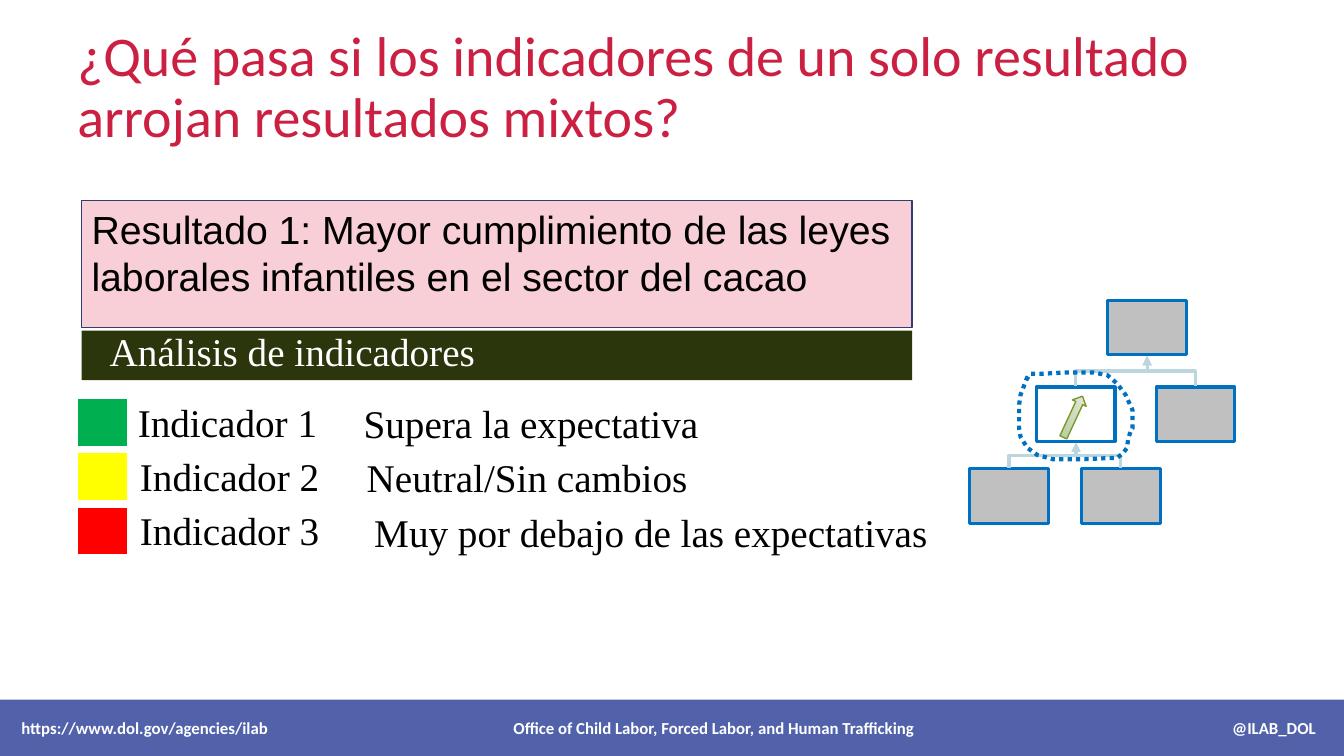
from pptx import Presentation
from pptx.dml.color import RGBColor
from pptx.enum.dml import MSO_LINE
from pptx.enum.shapes import MSO_CONNECTOR, MSO_SHAPE
from pptx.enum.text import MSO_ANCHOR, PP_ALIGN
from pptx.oxml.ns import qn
from pptx.util import Pt
from lxml import etree

RECT, ARROW = MSO_SHAPE.RECTANGLE, MSO_SHAPE.RIGHT_ARROW
ELBOW, DOTS = MSO_CONNECTOR.ELBOW, MSO_LINE.ROUND_DOT
TOP, MID = MSO_ANCHOR.TOP, MSO_ANCHOR.MIDDLE
LEFT, CENTER, RIGHT = PP_ALIGN.LEFT, PP_ALIGN.CENTER, PP_ALIGN.RIGHT
SERIF = "Times New Roman"

HEX = {
    "title": "CB2042", "pink": "F8CFD7", "navy": "2F3C78", "olive": "2B360D",
    "green": "00B050", "yellow": "FFFF00", "red": "FF0000", "gray": "C0C0C0",
    "blue": "0070C0", "pale": "BCD6E0", "leaf": "7C992E", "dark": "B4C998",
    "light": "E8EDE1", "footer": "3F51A2", "black": "000000", "white": "FFFFFF",
}
COLOR = {name: RGBColor.from_string(code) for name, code in HEX.items()}

prs = Presentation()
prs.slide_width, prs.slide_height = Pt(960), Pt(540)
shapes = prs.slides.add_slide(prs.slide_layouts[6]).shapes


def add_box(kind, x, y, w, h, fill=None, line=None, width=1):
    """Add a preset shape; without a fill or line name that part is clear."""
    box = shapes.add_shape(kind, Pt(x), Pt(y), Pt(w), Pt(h))
    box.shadow.inherit = False
    if fill:
        box.fill.solid()
        box.fill.fore_color.rgb = COLOR[fill]
    else:
        box.fill.background()
    if line:
        box.line.color.rgb = COLOR[line]
        box.line.width = Pt(width)
    else:
        box.line.fill.background()
    return box


def add_text(text, x, y, w, h, size=28, font=SERIF, color="black",
             align=LEFT, anchor=TOP, bold=False):
    box = shapes.add_textbox(Pt(x), Pt(y), Pt(w), Pt(h))
    frame = box.text_frame
    frame.text = text
    frame.word_wrap = True
    frame.vertical_anchor = anchor
    para = frame.paragraphs[0]
    para.alignment = align
    face = para.runs[0].font
    face.size, face.name, face.bold = Pt(size), font, bold
    face.color.rgb = COLOR[color]
    return para


# Title and result
title = add_text("¿Qué pasa si los indicadores de un solo resultado arrojan resultados mixtos?",
                 48.2, 27.4, 851.8, 72, 40, "Calibri", "title", anchor=MID)
title.line_spacing = 0.9

add_box(RECT, 58.3, 143.3, 593.3, 90.7, "pink", "navy")
add_text("Resultado 1: Mayor cumplimiento de las leyes laborales infantiles en el sector del cacao",
         58.3, 143.3, 593.3, 90.7, font="Arial")
add_box(RECT, 58.3, 236.2, 593.3, 35.3, "olive")
add_text("Análisis de indicadores", 71.3, 230.4, 580.3, 42.5, color="white")

# Indicator rows
rows = [
    ("green", 91.4, "Supera la expectativa", 252.7, LEFT),
    ("yellow", 92.9, "Neutral/Sin cambios", 254.9, LEFT),
    ("red", 92.9, "Muy por debajo de las expectativas", 247.7, RIGHT),
]
for i, (color, left, finding, x, align) in enumerate(rows):
    add_box(RECT, 55.4, 284.4 + 38.9 * i, 35.6, 34.4, color, "white")
    add_text(f"Indicador {i + 1}", left, 281.2 + 38.5 * i, 144, 41)
    add_text(finding, x, 281.5 + 38.9 * i, 421.9, 41, align=align)

# Results tree
nodes = [(791.3, 214.6, "gray"), (772.6, 334.8, "gray"), (692.6, 334.8, "gray"),
         (825.8, 276.5, "gray"), (740.2, 276.5, None)]
for x, y, fill in nodes:
    add_box(RECT, x, y, 56.2, 38.9, fill, "blue", 2.25)

links = [(720.7, 334.1, 768.6, 316.1), (800.6, 334.1, 768.6, 316.1),
         (768.2, 275.8, 819.4, 254.2), (853.9, 275.8, 819.4, 254.2)]
for x1, y1, x2, y2 in links:
    # An upright elbow is a level one turned a quarter about its centre
    mid_x, mid_y = (x1 + x2) / 2, (y1 + y2) / 2
    high, wide = y1 - y2, abs(x2 - x1)
    side = 1 if x2 > x1 else -1
    link = shapes.add_connector(
        ELBOW, Pt(mid_x - side * high / 2), Pt(mid_y - wide / 2),
        Pt(mid_x + side * high / 2), Pt(mid_y + wide / 2))
    link.line.color.rgb = COLOR["pale"]
    link.line.width = Pt(2.25)
    props = link._element.spPr
    props.find(qn("a:xfrm")).set("rot", "16200000" if side > 0 else "5400000")
    etree.SubElement(props.find(qn("a:ln")), qn("a:tailEnd"), type="triangle")
    etree.SubElement(props, qn("a:effectLst"))

# Dotted loop round the chosen result
loop = [(733.7, 269.3), (729.4, 281.5), (727.9, 289.4), (727.9, 306),
        (729.4, 312), (732.2, 316.8), (734.4, 320.4), (741, 325),
        (751.7, 327.6), (774, 327.6), (797.8, 326.9), (802.1, 324),
        (805, 319.7), (806.4, 313.2), (808, 307.4), (808.6, 306),
        (808.6, 293), (803.5, 281.5), (798.5, 273.6), (791.3, 267.8),
        (781.2, 266.4), (762, 266.5), (743.8, 267.1), (736, 267), (732.2, 272.9)]
pen = shapes.build_freeform(*loop[0], scale=Pt(1))
pen.add_line_segments(loop[1:], close=False)
ring = pen.convert_to_shape()
ring.shadow.inherit = False
ring.fill.background()
ring.line.color.rgb = COLOR["blue"]
ring.line.width = Pt(3)
ring.line.dash_style = DOTS

trend = add_box(ARROW, 750.2, 292.3, 32.4, 10.8, "dark", "leaf")
trend.rotation = 294.9
trend.fill.gradient()
trend.fill.gradient_angle = 315
for stop, name in zip(trend.fill.gradient_stops, ("dark", "light")):
    stop.color.rgb = COLOR[name]

# Footer
bar = add_box(RECT, 0, 499.7, 962.6, 40.3, "footer")
tint = bar._element.spPr.find(qn("a:solidFill"))[0]
etree.SubElement(tint, qn("a:alpha"), val="90000")
notes = [("https://www.dol.gov/agencies/ilab", 8.2, LEFT),
         ("Office of Child Labor, Forced Labor, and Human Trafficking", 350, CENTER),
         ("@ILAB_DOL", 627, RIGHT)]
for text, x, align in notes:
    add_text(text, x, 499.7, 320, 40.3, 12, "Calibri", "white", align, MID, True)

prs.save("out.pptx")
